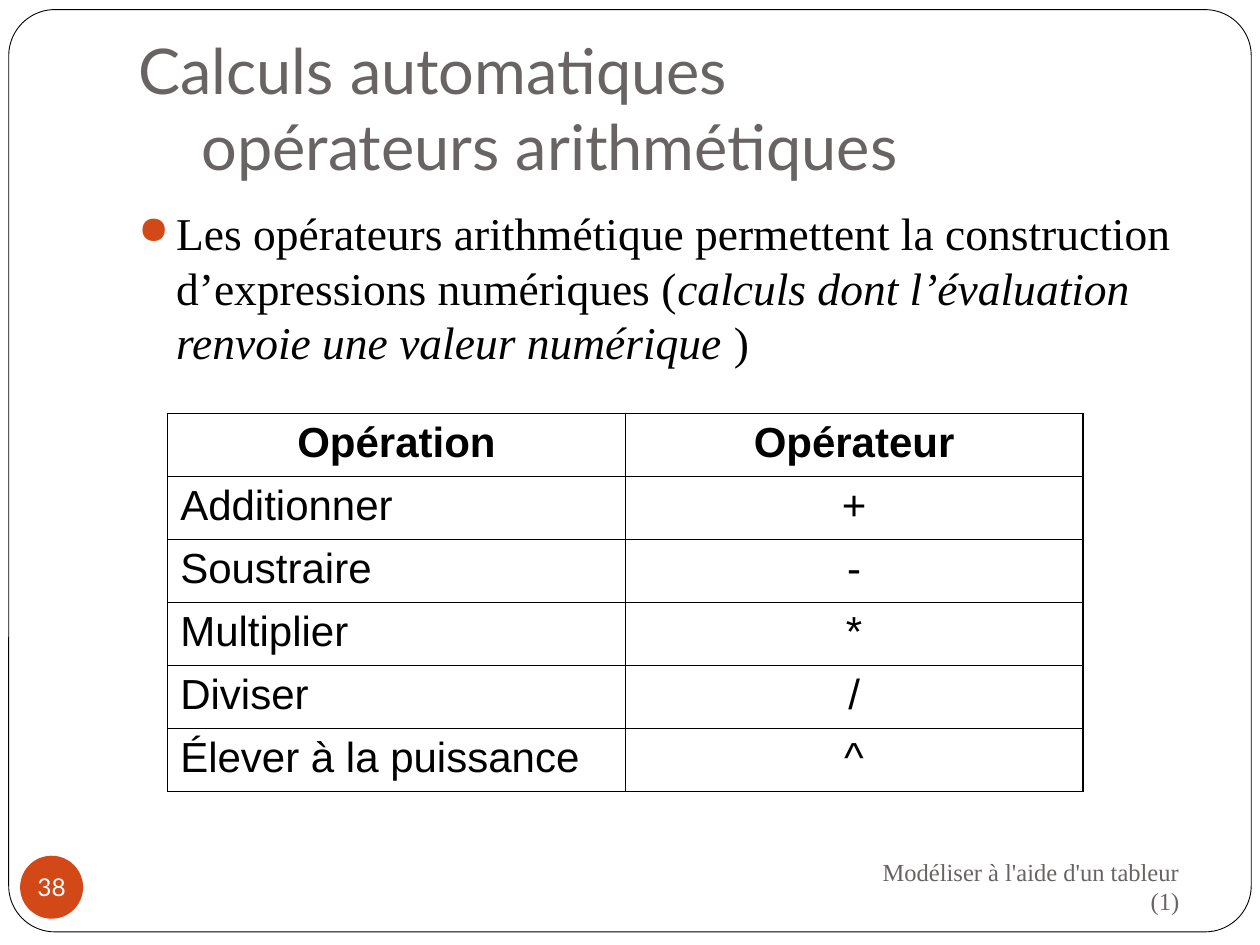
from lxml.etree import SubElement
from pptx import Presentation
from pptx.dml.color import RGBColor
from pptx.enum.shapes import MSO_SHAPE as SHAPE
from pptx.enum.text import MSO_ANCHOR as ANCHOR, PP_ALIGN as ALIGN
from pptx.oxml import parse_xml
from pptx.oxml.ns import nsdecls, qn
from pptx.util import Pt

BLACK, WHITE, GREY, ORANGE = "000000", "FFFFFF", "696464", "D34817"
OPERATIONS = [
    ("Opération", "Opérateur"),
    ("Additionner", "+"),
    ("Soustraire", "-"),
    ("Multiplier", "*"),
    ("Diviser", "/"),
    ("Élever à la puissance", "^"),
]


def color(value):
    """Turn a hex string into a colour."""
    return RGBColor.from_string(value)


def set_attributes(target, values):
    """Set each attribute named in a dict of format values."""
    for name, value in values.items():
        setattr(target, name, value)


def write(paragraph, text, size, face, ink, align=ALIGN.LEFT, **extra):
    """Add text, with its line breaks, to a paragraph in one format."""
    paragraph.alignment = align
    for index, line in enumerate(text.split("\n")):
        if index:
            paragraph.add_line_break()
        run = paragraph.add_run()
        run.text = line
        set_attributes(run.font, {"size": Pt(size), "name": face, **extra})
        run.font.color.rgb = color(ink)


def add_text_area(slide, box, **frame_format):
    """Add a wrapping text box and return its first paragraph."""
    frame = slide.shapes.add_textbox(*map(Pt, box)).text_frame
    set_attributes(frame, {"word_wrap": True, **frame_format})
    return frame.paragraphs[0]


def add_plain_shape(slide, kind, box, fill):
    """Add a filled shape without a shadow."""
    shape = slide.shapes.add_shape(kind, *map(Pt, box))
    shape.shadow.inherit = False
    shape.fill.solid()
    shape.fill.fore_color.rgb = color(fill)
    return shape


def add_page_frame(slide, box):
    """Draw the rounded outline around the page."""
    outline = add_plain_shape(slide, SHAPE.ROUNDED_RECTANGLE, box, WHITE)
    outline.adjustments[0] = 0.05
    outline.line.color.rgb = color(BLACK)
    outline.line.width = Pt(0.5)


def add_title(slide, box):
    """Write the two-line title, with its second line tabbed in."""
    title = add_text_area(slide, box, vertical_anchor=ANCHOR.BOTTOM, margin_bottom=Pt(7.2))
    write(title, "Calculs automatiques\n\topérateurs arithmétiques", 36, "Lato", GREY)


def add_statement(slide, box):
    """Write the bulleted statement about arithmetic operators."""
    statement = add_text_area(slide, box)
    statement.space_before = Pt(5.8)
    properties = statement._p.get_or_add_pPr()
    indent = Pt(21.6)
    properties.set("marL", str(indent))
    properties.set("indent", str(-indent))
    bullet_color = SubElement(properties, qn("a:buClr"))
    SubElement(bullet_color, qn("a:srgbClr"), val=ORANGE)
    SubElement(properties, qn("a:buSzPct"), val="85000")
    SubElement(properties, qn("a:buChar"), char="●")
    for text, italic in (
        ("Les opérateurs arithmétique permettent la construction d’expressions numériques (", False),
        ("calculs dont l’évaluation renvoie une valeur numérique ", True),
        (")", False),
    ):
        write(statement, text, 26, "Times New Roman", BLACK, italic=italic)


def add_cell_borders(cell):
    """Draw a thin black line on each side of a cell."""
    properties = cell._tc.get_or_add_tcPr()
    for index, side in enumerate("LRTB"):
        border = parse_xml(
            f'<a:ln{side} {nsdecls("a")} w="{Pt(1)}"><a:solidFill>'
            f'<a:srgbClr val="{BLACK}"/></a:solidFill></a:ln{side}>'
        )
        properties.insert(index, border)


def add_operations(slide, box):
    """Build the table of operations and their operators."""
    size = len(OPERATIONS), len(OPERATIONS[0])
    table = slide.shapes.add_table(*size, *map(Pt, box)).table
    set_attributes(table, {"first_row": False, "horz_banding": False})
    for row, entries in enumerate(OPERATIONS):
        for column, text in enumerate(entries):
            cell = table.cell(row, column)
            cell.fill.background()
            add_cell_borders(cell)
            header = row == 0
            align = ALIGN.CENTER if header or column else ALIGN.LEFT
            write(cell.text_frame.paragraphs[0], text, 24, "Arial", BLACK, align, bold=header)


def add_footer(slide, box):
    """Write the course title at the lower right."""
    footer = add_text_area(slide, box, vertical_anchor=ANCHOR.MIDDLE)
    write(footer, "Modéliser à l'aide d'un tableur (1)", 14, "Times New Roman", GREY, ALIGN.RIGHT)


def add_page_number(slide, box):
    """Draw the round badge with the page number."""
    badge = add_plain_shape(slide, SHAPE.OVAL, box, ORANGE)
    badge.line.fill.background()
    margins = {f"margin_{side}": 0 for side in ("left", "top", "right", "bottom")}
    set_attributes(
        badge.text_frame,
        {"word_wrap": False, "vertical_anchor": ANCHOR.MIDDLE, **margins},
    )
    write(badge.text_frame.paragraphs[0], "38", 14, "Lato", WHITE, ALIGN.CENTER)


def main():
    """Build the slide and save it."""
    deck = Presentation()
    set_attributes(deck, {"slide_width": Pt(720), "slide_height": Pt(540)})
    slide = deck.slides.add_slide(deck.slide_layouts[6])
    add_page_frame(slide, (5, 5.5, 710, 527))
    add_title(slide, (72, 21.6, 612, 90))
    add_statement(slide, (72, 113.8, 612, 360))
    add_footer(slide, (486, 487.5, 195, 37.5))
    add_page_number(slide, (11.5, 489, 36, 36))
    add_operations(slide, (95.8, 236.2, 523, 204))
    deck.save("out.pptx")


if __name__ == "__main__":
    main()
